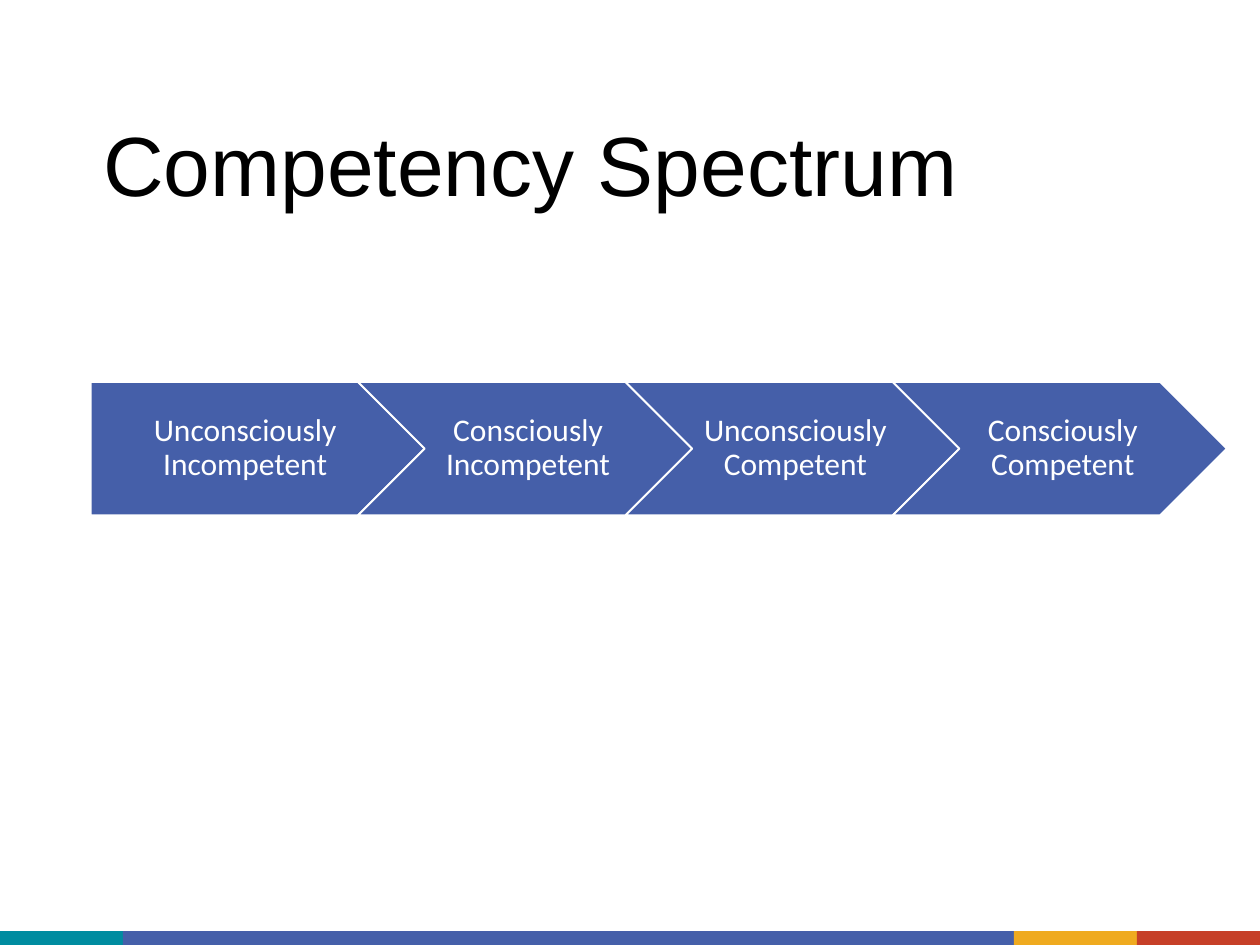
"""Build the Competency Spectrum slide: four linked stages above a colour strip."""
from pptx import Presentation, util as u
from pptx.dml.color import RGBColor
from pptx.enum import shapes, text


def paint(fmt, hue):
    fmt.solid()
    fmt.fore_color.rgb = RGBColor.from_string(hue)


def write(frame, words, face, size, hue, pads):
    frame.word_wrap = True
    frame.auto_size = text.MSO_AUTO_SIZE.NONE
    (frame.margin_left, frame.margin_top,
     frame.margin_right, frame.margin_bottom) = [u.Cm(p) for p in pads]
    para = frame.paragraphs[0]
    para.line_spacing = 0.9
    run = para.add_run()
    run.text = words
    run.font.name = face
    run.font.size = u.Pt(size)
    paint(run.font.fill, hue)
    return para


deck = Presentation()
deck.slide_width, deck.slide_height = u.Cm(25.4), u.Cm(19.05)
slide = deck.slides.add_slide(deck.slide_layouts[5])
kinds = shapes.MSO_SHAPE

left = 0
for wide, hue in [(2.48, "008CA0"), (17.96, "455FA9"), (2.48, "EFAA1F"), (2.48, "C63F28")]:
    bar = slide.shapes.add_shape(kinds.RECTANGLE, u.Cm(left), u.Cm(18.77), u.Cm(wide), u.Cm(0.28))
    bar.shadow.inherit = False
    paint(bar.fill, hue)
    bar.line.fill.background()
    left += wide

title = slide.shapes.title
title.left, title.top, title.width, title.height = u.Cm(1.83), u.Cm(1.4), u.Cm(17.96), u.Cm(3.18)
para = write(title.text_frame, "Competency Spectrum", "Arial", 48, "000000", [0.25] * 4)
para.alignment = text.PP_ALIGN.LEFT
title.text_frame.vertical_anchor = text.MSO_ANCHOR.BOTTOM

stages = ["Unconsciously Incompetent", "Consciously Incompetent",
          "Unconsciously Competent", "Consciously Competent"]
for i, stage in enumerate(stages):
    kind, pad = (kinds.CHEVRON, 0.2) if i else (kinds.PENTAGON, 0.25)
    arrow = slide.shapes.add_shape(kind, u.Cm(1.83 + 5.39 * i), u.Cm(7.7), u.Cm(6.73), u.Cm(2.69))
    arrow.shadow.inherit = False
    paint(arrow.fill, "455FA9")
    paint(arrow.line.fill, "FFFFFF")
    arrow.line.width = u.Pt(1)
    para = write(arrow.text_frame, stage, "Calibri", 18, "FFFFFF", [pad, 0.13, 0.08, 0.13])
    para.alignment = text.PP_ALIGN.CENTER
    arrow.text_frame.vertical_anchor = text.MSO_ANCHOR.MIDDLE

deck.save("out.pptx")
